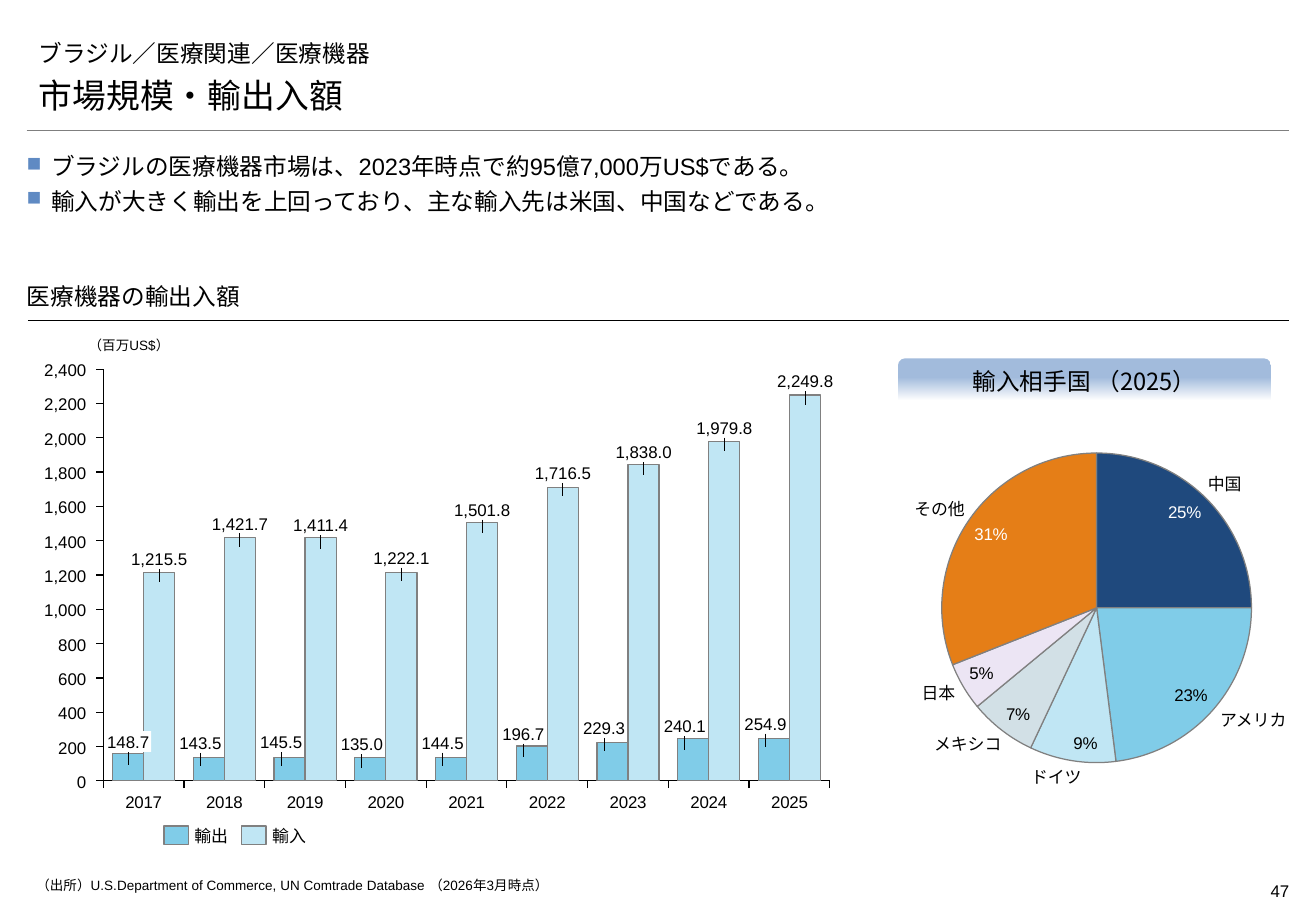
from dataclasses import dataclass

from lxml import etree
from pptx import Presentation
from pptx.chart.data import CategoryChartData
from pptx.dml.color import RGBColor
from pptx.enum.chart import XL_CHART_TYPE, XL_LABEL_POSITION, XL_TICK_LABEL_POSITION, XL_TICK_MARK
from pptx.enum.shapes import MSO_CONNECTOR, MSO_SHAPE
from pptx.enum.text import MSO_ANCHOR, PP_ALIGN
from pptx.oxml.ns import qn
from pptx.util import Inches, Pt

LEFT, CENTER, RIGHT, JUSTIFY = PP_ALIGN.LEFT, PP_ALIGN.CENTER, PP_ALIGN.RIGHT, PP_ALIGN.JUSTIFY
TOP, MIDDLE, BOTTOM = MSO_ANCHOR.TOP, MSO_ANCHOR.MIDDLE, MSO_ANCHOR.BOTTOM
COLUMNS, PIE = XL_CHART_TYPE.COLUMN_CLUSTERED, XL_CHART_TYPE.PIE
INSIDE_END = XL_LABEL_POSITION.INSIDE_END
TICK_OUT, NO_LABELS = XL_TICK_MARK.OUTSIDE, XL_TICK_LABEL_POSITION.NONE


@dataclass(frozen=True)
class Theme:
    ink: str = "000000"
    white: str = "FFFFFF"
    rule: str = "7F7F7F"
    outline: str = "808080"
    exports: str = "80CCE8"
    imports: str = "C0E6F4"
    banner: str = "A2BBDC"
    bullet: str = "5F8AC3"
    body_font: str = "Arial"
    title_font: str = "Montserrat"
    banner_font: str = "Noto Sans CJK JP"
    title: int = 20
    heading: int = 14
    label: int = 10
    note: int = 8


@dataclass(frozen=True)
class Box:
    left: float
    top: float
    width: float
    height: float

    def emu(self) -> tuple:
        return tuple(Inches(v) for v in (self.left, self.top, self.width, self.height))


@dataclass(frozen=True)
class Label:
    text: str
    box: Box
    size: int = 10
    font: str = "Arial"
    align: PP_ALIGN = LEFT
    anchor: MSO_ANCHOR = MIDDLE
    insets: tuple = (0, 0, 0, 0)
    wrap: bool = False


@dataclass(frozen=True)
class Partner:
    name: str
    share: int
    color: str
    label_color: str
    label_box: Box
    align: PP_ALIGN = RIGHT


T = Theme()
TITLE_INSETS = (0.1, 0.05, 0.1, 0.05)
YEARS = [str(y) for y in range(2017, 2026)]
EXPORTS = [148.7, 143.5, 145.5, 135.0, 144.5, 196.7, 229.3, 240.1, 254.9]
IMPORTS = [1215.5, 1421.7, 1411.4, 1222.1, 1501.8, 1716.5, 1838.0, 1979.8, 2249.8]
PEAK = max(IMPORTS)
AXIS_MAX, AXIS_STEP, GAP = 2400, 200, 60
BAR_FRAME = Box(0.3, 2.9, 6.65, 3.85)
BAR_PLOT = Box(0.85, 3.04, 5.98, 3.39)
PIE_FRAME = Box(7.66, 3.39, 2.73, 3.23)
PIE_PLOT = Box(7.75, 3.73, 2.55, 2.55)
PARTNERS = [
    Partner("中国", 25, "1F497D", T.white, Box(9.94, 3.9, 0.32, 0.17), LEFT),
    Partner("アメリカ", 23, T.exports, T.ink, Box(10.04, 5.84, 0.65, 0.17), LEFT),
    Partner("ドイツ", 9, T.imports, T.ink, Box(8.4, 6.31, 0.5, 0.17)),
    Partner("メキシコ", 7, "D2E0E6", T.ink, Box(7.59, 6.04, 0.65, 0.17)),
    Partner("日本", 5, "ECE5F4", T.ink, Box(7.54, 5.62, 0.32, 0.17)),
    Partner("その他", 31, "E57E17", T.white, Box(7.44, 4.1, 0.5, 0.17)),
]
HEADINGS = [
    Label("ブラジル／医療関連／医療機器", Box(0.22, 0.26, 10.39, 0.34), T.heading, T.title_font,
          anchor=BOTTOM, insets=TITLE_INSETS, wrap=True),
    Label("市場規模・輸出入額", Box(0.22, 0.56, 10.4, 0.44), T.title, T.title_font,
          anchor=BOTTOM, insets=TITLE_INSETS, wrap=True),
    Label("医療機器の輸出入額", Box(0.22, 2.32, 10.39, 0.31), T.heading, T.title_font,
          anchor=BOTTOM, insets=(0, 0.05, 0, 0.08), wrap=True),
    Label("（百万US$）", Box(0.73, 2.72, 0.75, 0.24), T.note, wrap=True),
    Label("（出所）U.S.Department of Commerce, UN Comtrade Database （2026年3月時点）",
          Box(0.3, 7.22, 8.66, 0.15), T.note, anchor=TOP, wrap=True),
    Label("47", Box(9.82, 7.2, 0.79, 0.27), align=RIGHT, anchor=TOP,
          insets=(0, 0.05, 0, 0.05), wrap=True),
]
MESSAGES = Label(
    "ブラジルの医療機器市場は、2023年時点で約95億7,000万US$である。\n"
    "輸入が大きく輸出を上回っており、主な輸入先は米国、中国などである。",
    Box(0.22, 1.23, 10.39, 0.81), T.heading, align=JUSTIFY, anchor=TOP, wrap=True)


def rgb(color: str) -> RGBColor:
    return RGBColor.from_string(color)


def percent_of_peak(value: float) -> float:
    return 100 * value / PEAK


def bar_y(value: float) -> float:
    return BAR_PLOT.top + BAR_PLOT.height * (1 - value / AXIS_MAX)


def style_font(font, size: int, color: str = T.ink, name: str = T.body_font) -> None:
    font.size, font.name, font.color.rgb = Pt(size), name, rgb(color)


def style_fill(fill, color: str) -> None:
    fill.solid()
    fill.fore_color.rgb = rgb(color)


def style_line(line, color: str, width: float) -> None:
    line.color.rgb, line.width = rgb(color), Pt(width)


def fill_text(s, label: Label) -> None:
    tf = s.text_frame
    tf.text = label.text
    tf.word_wrap, tf.vertical_anchor = label.wrap, label.anchor
    tf.margin_left, tf.margin_top, tf.margin_right, tf.margin_bottom = map(Inches, label.insets)
    for p in tf.paragraphs:
        p.alignment = label.align
        for r in p.runs:
            style_font(r.font, label.size, name=label.font)
            if label.font == T.title_font:
                etree.SubElement(r._r.get_or_add_rPr(), qn("a:ea"), typeface=label.font)


def add_label(slide, label: Label):
    s = slide.shapes.add_textbox(*label.box.emu())
    fill_text(s, label)
    return s


def add_line(slide, x1: float, y1: float, x2: float, y2: float, color: str, width: float) -> None:
    s = slide.shapes.add_connector(MSO_CONNECTOR.STRAIGHT, *map(Inches, (x1, y1, x2, y2)))
    style_line(s.line, color, width)
    etree.SubElement(s._element.spPr, qn("a:effectLst"))


def add_messages(slide) -> None:
    for p in add_label(slide, MESSAGES).text_frame.paragraphs:
        p.line_spacing, p.space_after = 1.1, Pt(2)
        pPr = p._p.get_or_add_pPr()
        pPr.set("marL", str(Inches(0.2)))
        pPr.set("indent", str(-Inches(0.2)))
        color = etree.SubElement(pPr, qn("a:buClr"))
        etree.SubElement(color, qn("a:srgbClr"), val=T.bullet)
        etree.SubElement(pPr, qn("a:buSzPct"), val="85000")
        etree.SubElement(pPr, qn("a:buChar"), char="■")


def add_chart(slide, kind, frame: Box, plot: Box, data: CategoryChartData):
    """Add a chart whose inner plot area sits exactly on the given slide box."""
    chart = slide.shapes.add_chart(kind, *frame.emu(), data).chart
    chart.has_legend = chart.has_title = False
    style_font(chart.font, T.label)
    area = chart._chartSpace.chart.plotArea
    for old in area.findall(qn("c:layout")):
        area.remove(old)
    layout = etree.Element(qn("c:layout"))
    area.insert(0, layout)
    manual = etree.SubElement(layout, qn("c:manualLayout"))
    settings = {"layoutTarget": "inner", "xMode": "edge", "yMode": "edge",
                "x": (plot.left - frame.left) / frame.width,
                "y": (plot.top - frame.top) / frame.height,
                "w": plot.width / frame.width, "h": plot.height / frame.height}
    for tag, value in settings.items():
        etree.SubElement(manual, qn(f"c:{tag}"), val=str(value))
    return chart


def add_trade_chart(slide) -> None:
    """Draw the bars as percentages of the peak; the amounts are written beside them."""
    data = CategoryChartData(number_format="0")
    data.categories = YEARS
    for name, amounts in (("輸出", EXPORTS), ("輸入", IMPORTS)):
        data.add_series(name, [round(percent_of_peak(v)) for v in amounts])
    chart = add_chart(slide, COLUMNS, BAR_FRAME, BAR_PLOT, data)
    bars = chart.plots[0]
    bars.gap_width, bars.overlap, bars.vary_by_categories = GAP, 0, False
    for series, color in zip(bars.series, (T.exports, T.imports)):
        style_fill(series.format.fill, color)
        style_line(series.format.line, T.outline, 0.75)
    for axis in (chart.category_axis, chart.value_axis):
        axis.has_major_gridlines = False
        axis.major_tick_mark = TICK_OUT
        style_line(axis.format.line, T.ink, 0.75)
        style_font(axis.tick_labels.font, T.label)
    axis = chart.value_axis
    axis.minimum_scale, axis.maximum_scale = 0, percent_of_peak(AXIS_MAX)
    axis.major_unit = percent_of_peak(AXIS_STEP)
    axis.tick_label_position = NO_LABELS
    for amount in range(0, AXIS_MAX + 1, AXIS_STEP):
        add_label(slide, Label(f"{amount:,}", Box(0.26, bar_y(amount) - 0.08, 0.45, 0.17), align=RIGHT))


def add_bar_labels(slide) -> None:
    step = BAR_PLOT.width / len(YEARS)
    bar = step / (2 + GAP / 100)
    for i, pair in enumerate(zip(EXPORTS, IMPORTS)):
        middle = BAR_PLOT.left + (i + 0.5) * step
        export_shift = 0.07 if i else 0
        for value, x, width in zip(pair, (middle - bar / 2 - export_shift, middle + bar / 2), (0.38, 0.5)):
            y = bar_y(value)
            add_line(slide, x, y - 0.03, x, y + 0.08, T.ink, 0.5)
            s = add_label(slide, Label(f"{value:,.1f}", Box(x - width / 2, y - 0.2, width, 0.17),
                                       align=CENTER, anchor=BOTTOM))
            if value == EXPORTS[0]:
                style_fill(s.fill, T.white)


def add_legend(slide) -> None:
    for name, color, left in (("輸出", T.exports, 1.35), ("輸入", T.imports, 1.99)):
        s = slide.shapes.add_shape(MSO_SHAPE.RECTANGLE, *Box(left, 6.8, 0.2, 0.15).emu())
        s.shadow.inherit = False
        style_fill(s.fill, color)
        style_line(s.line, T.outline, 0.75)
        add_label(slide, Label(name, Box(left + 0.25, 6.8, 0.32, 0.17)))


def add_partner_pie(slide) -> None:
    data = CategoryChartData(number_format='0"%"')
    data.categories = [partner.name for partner in PARTNERS]
    data.add_series("輸入相手国", [partner.share for partner in PARTNERS])
    series = add_chart(slide, PIE, PIE_FRAME, PIE_PLOT, data).plots[0].series[0]
    for i, partner in enumerate(PARTNERS):
        point = series.points[i]
        style_fill(point.format.fill, partner.color)
        style_line(point.format.line, T.outline, 0.75)
        style_font(point.data_label.font, T.label, partner.label_color)
        point.data_label.position = INSIDE_END
        add_label(slide, Label(partner.name, partner.label_box, align=partner.align))


def add_banner(slide) -> None:
    box = Box(7.39, 2.95, 3.07, 0.35)
    s = slide.shapes.add_shape(MSO_SHAPE.ROUND_2_SAME_RECTANGLE, *box.emu())
    s.shadow.inherit = False
    s.line.fill.background()
    s.fill.gradient()
    s.fill.gradient_angle = 270
    for stop, position, color in zip(s.fill.gradient_stops, (0.45, 1), (T.banner, T.white)):
        stop.position, stop.color.rgb = position, rgb(color)
    fill_text(s, Label("輸入相手国 （2025）", box, T.heading, T.banner_font, CENTER,
                       insets=TITLE_INSETS, wrap=True))


def main() -> None:
    prs = Presentation()
    prs.slide_width, prs.slide_height = Inches(10.83), Inches(7.5)
    slide = prs.slides.add_slide(prs.slide_layouts[6])
    add_line(slide, 0.22, 1.07, 10.61, 1.07, T.rule, 0.25)
    add_line(slide, 0.23, 2.64, 10.61, 2.64, T.ink, 0.75)
    add_trade_chart(slide)
    add_bar_labels(slide)
    add_legend(slide)
    add_banner(slide)
    add_partner_pie(slide)
    for heading in HEADINGS:
        add_label(slide, heading)
    add_messages(slide)
    prs.save("out.pptx")


if __name__ == "__main__":
    main()
